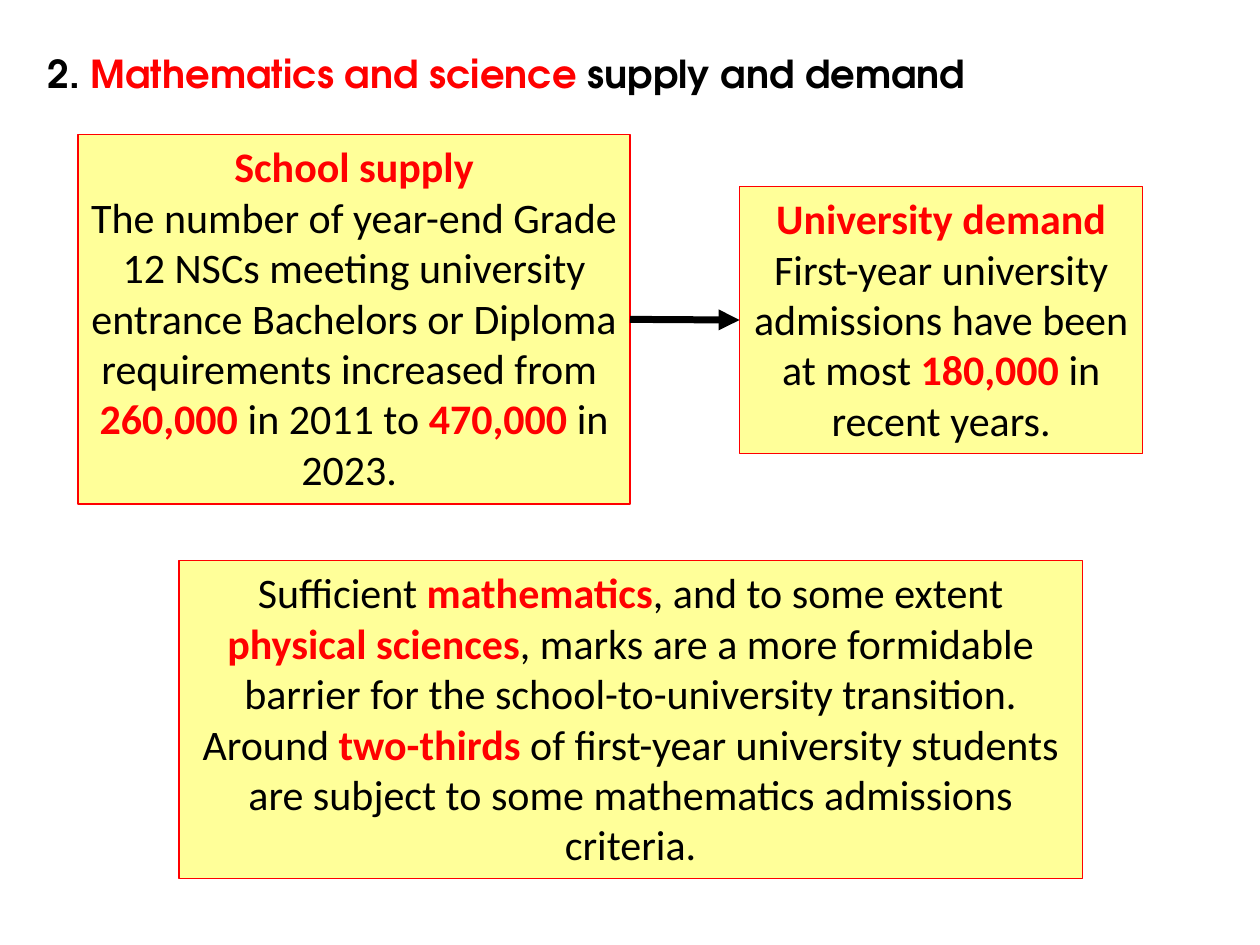
from pptx import Presentation
from pptx.dml.color import RGBColor
from pptx.enum.shapes import MSO_CONNECTOR, MSO_SHAPE
from pptx.enum.text import MSO_ANCHOR, PP_ALIGN
from pptx.oxml.ns import qn
from pptx.util import Inches, Pt
from lxml import etree

BLACK = RGBColor(0x00, 0x00, 0x00)
RED = RGBColor(0xFF, 0x00, 0x00)
YELLOW = RGBColor(0xFF, 0xFF, 0x99)
WHITE = RGBColor(0xFF, 0xFF, 0xFF)
LEFT, CENTER = PP_ALIGN.LEFT, PP_ALIGN.CENTER
MIDDLE, TOP = MSO_ANCHOR.MIDDLE, MSO_ANCHOR.TOP
RECTANGLE, STRAIGHT = MSO_SHAPE.RECTANGLE, MSO_CONNECTOR.STRAIGHT
RIGHT_SIDE, LEFT_SIDE = 3, 1

# Content: each paragraph is a list of (text, highlighted) spans
TITLE = [[("2. ", False), ("Mathematics and science ", True),
          ("supply and demand", False)]]
TITLE_AREA = (0.28, 0.32, 7.8, 0.52)
BOXES = {
    "supply": ((0.62, 1.07, 4.38, 2.93), [
        [("School supply", True)],
        [("The number of year-end Grade 12 NSCs meeting university entrance "
          "Bachelors or Diploma requirements increased from  ", False),
         ("260,000", True), (" in 2011 to ", False),
         ("470,000", True), (" in 2023. ", False)],
    ]),
    "demand": ((5.87, 1.48, 3.2, 2.12), [
        [("University demand", True)],
        [("First-year university admissions have been at most ", False),
         ("180,000 ", True), ("in recent years.", False)],
    ]),
    "barrier": ((1.42, 4.45, 7.17, 2.52), [
        [("Sufficient ", False), ("mathematics", True),
         (", and to some extent ", False), ("physical sciences", True),
         (", marks are a more formidable barrier for the "
          "school-to-university transition. Around ", False),
         ("two-thirds", True),
         (" of first-year university students are subject to some "
          "mathematics admissions criteria.", False)],
    ]),
}
TITLE_FONT = {"name": "TeX Gyre Adventor", "size": Pt(22), "bold": True}
BOX_FONT = {"name": "Calibri", "size": Pt(24)}


def write(frame, paragraphs, font, align, anchor):
    frame.word_wrap = True
    frame.vertical_anchor = anchor
    for index, spans in enumerate(paragraphs):
        para = frame.add_paragraph() if index else frame.paragraphs[0]
        para.alignment = align
        for text, highlighted in spans:
            span = para.add_run()
            span.text = text
            for key, value in {"bold": highlighted, **font}.items():
                setattr(span.font, key, value)
            span.font.color.rgb = RED if highlighted else BLACK


def add_box(page, area, paragraphs):
    box = page.shapes.add_shape(RECTANGLE, *map(Inches, area))
    box.shadow.inherit = False
    box.fill.solid()
    box.fill.fore_color.rgb = YELLOW
    box.line.color.rgb = RED
    box.line.width = Pt(0.75)
    write(box.text_frame, paragraphs, BOX_FONT, CENTER, TOP)
    return box


def add_arrow(page, start, end):
    arrow = page.shapes.add_connector(STRAIGHT, 0, 0, 0, 0)
    arrow.begin_connect(start, RIGHT_SIDE)
    arrow.end_connect(end, LEFT_SIDE)
    arrow.line.color.rgb = BLACK
    arrow.line.width = Pt(4)
    etree.SubElement(arrow.line._get_or_add_ln(), qn("a:tailEnd"), type="triangle")
    etree.SubElement(arrow._element.spPr, qn("a:effectLst"))


def main():
    deck = Presentation()
    deck.slide_width, deck.slide_height = Inches(10), Inches(7.5)
    page = deck.slides.add_slide(deck.slide_layouts[5])

    # Title
    title = page.shapes.title
    title.left, title.top, title.width, title.height = map(Inches, TITLE_AREA)
    title.fill.solid()
    title.fill.fore_color.rgb = WHITE
    write(title.text_frame, TITLE, TITLE_FONT, LEFT, MIDDLE)

    # Boxes and the arrow from supply to demand
    boxes = {name: add_box(page, *content) for name, content in BOXES.items()}
    add_arrow(page, boxes["supply"], boxes["demand"])

    deck.save("out.pptx")


if __name__ == "__main__":
    main()
